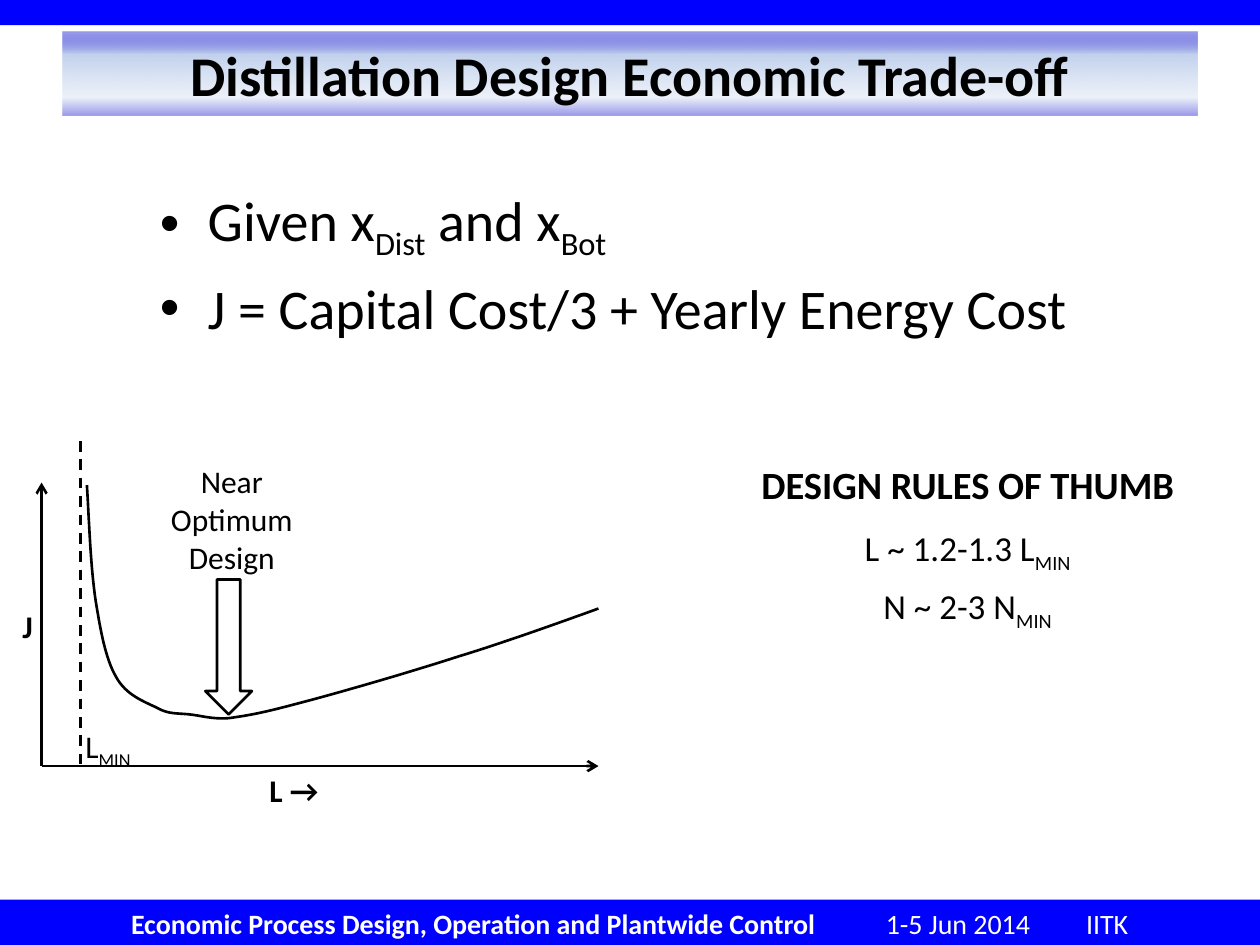
"""Build the distillation design economic trade-off slide."""
from lxml import etree
from pptx import Presentation
from pptx.dml.color import RGBColor
from pptx.enum.dml import MSO_LINE
from pptx.enum.shapes import MSO_CONNECTOR, MSO_SHAPE
from pptx.enum.text import MSO_ANCHOR, PP_ALIGN
from pptx.oxml import parse_xml
from pptx.oxml.ns import nsdecls, qn
from pptx.util import Inches, Pt

BLUE = RGBColor(0x00, 0x00, 0xFF)
WHITE = RGBColor(0xFF, 0xFF, 0xFF)
BLACK = RGBColor(0x00, 0x00, 0x00)
VIOLET = RGBColor(0x00, 0x00, 0xCC)
SKY = RGBColor(0xC2, 0xD1, 0xED)
PALE = RGBColor(0xD2, 0xDD, 0xF1)
FONT = "Calibri"
LINE_WIDTH = Pt(1.5)

TITLE_STOPS = [(1, VIOLET, 39), (27, SKY, 100), (78, PALE, 40), (100, VIOLET, 40)]
CURVE_START = (0.69, 3.85)
CURVE_SEGMENTS = [
    ((0.71, 4.18), (0.72, 4.51), (0.76, 4.77)),
    ((0.80, 5.02), (0.84, 5.23), (0.92, 5.37)),
    ((1.00, 5.52), (1.15, 5.57), (1.25, 5.62)),
    ((1.34, 5.67), (1.41, 5.66), (1.50, 5.67)),
    ((1.60, 5.68), (1.68, 5.71), (1.82, 5.70)),
    ((1.95, 5.68), (2.04, 5.67), (2.34, 5.59)),
    ((2.65, 5.51), (3.24, 5.34), (3.64, 5.21)),
    ((4.04, 5.09), (4.75, 4.83), (4.75, 4.83)),
]


def add_box(s, kind, left, top, width, height, fill=None, outline=None):
    """Add a preset shape with an optional fill and outline."""
    sp = s.shapes.add_shape(kind, Inches(left), Inches(top), Inches(width), Inches(height))
    sp.shadow.inherit = False
    if fill is None:
        sp.fill.background()
    else:
        sp.fill.solid()
        sp.fill.fore_color.rgb = fill
    if outline is None:
        sp.line.fill.background()
    else:
        sp.line.color.rgb = outline
        sp.line.width = LINE_WIDTH
    return sp


def set_gradient(sp, stops):
    """Give a shape a vertical gradient of (position, colour, opacity) stops."""
    gs = "".join(
        f'<a:gs pos="{pos * 1000}"><a:srgbClr val="{color}">'
        f'<a:alpha val="{alpha * 1000}"/></a:srgbClr></a:gs>'
        for pos, color, alpha in stops
    )
    grad = parse_xml(
        f'<a:gradFill {nsdecls("a")} rotWithShape="1"><a:gsLst>{gs}</a:gsLst>'
        '<a:lin ang="5400000" scaled="0"/></a:gradFill>'
    )
    spPr = sp._element.spPr
    spPr.replace(spPr.find(qn("a:noFill")), grad)


def write(p, text, size, bold=False, color=BLACK, align=PP_ALIGN.LEFT):
    """Fill a paragraph, setting the parts between underscores as subscripts."""
    p.alignment = align
    for i, part in enumerate(text.split("_")):
        if not part:
            continue
        r = p.add_run()
        r.text = part
        r.font.name = FONT
        r.font.size = Pt(size)
        r.font.bold = bold
        r.font.color.rgb = color
        if i % 2:
            r.font._element.set("baseline", "-25000")


def add_text(s, left, top, width, height, wrap=False):
    """Add an empty text box and return its text frame."""
    tb = s.shapes.add_textbox(Inches(left), Inches(top), Inches(width), Inches(height))
    tb.text_frame.word_wrap = wrap
    return tb.text_frame


def add_label(s, text, left, top, width, height, bold=False, wrap=False, align=PP_ALIGN.LEFT):
    """Add a diagram label."""
    tf = add_text(s, left, top, width, height, wrap)
    write(tf.paragraphs[0], text, 18, bold, align=align)


def add_line(s, start, end, arrow=False, dashed=False):
    """Add a straight black line, optionally dashed or with an arrowhead."""
    ends = [Inches(v) for v in (*start, *end)]
    line = s.shapes.add_connector(MSO_CONNECTOR.STRAIGHT, *ends)
    line.line.color.rgb = BLACK
    line.line.width = LINE_WIDTH
    if dashed:
        line.line.dash_style = MSO_LINE.DASH
    if arrow:
        etree.SubElement(line.line._get_or_add_ln(), qn("a:tailEnd"), type="arrow")
    etree.SubElement(line._element.spPr, qn("a:effectLst"))


def curve_points(start, segments, steps=16):
    """Return points along a chain of cubic Bezier segments."""
    points = [start]
    for c1, c2, end in segments:
        for i in range(1, steps + 1):
            t = i / steps
            u = 1 - t
            points.append(tuple(
                u**3 * a + 3 * u * u * t * b + 3 * u * t * t * c + t**3 * d
                for a, b, c, d in zip(start, c1, c2, end)
            ))
        start = end
    return points


def add_curve(s):
    """Draw the cost curve."""
    first, *rest = [(Inches(x), Inches(y)) for x, y in curve_points(CURVE_START, CURVE_SEGMENTS)]
    fb = s.shapes.build_freeform(*first)
    fb.add_line_segments(rest, close=False)
    sp = fb.convert_to_shape()
    sp.shadow.inherit = False
    sp.fill.background()
    sp.line.color.rgb = BLACK
    sp.line.width = LINE_WIDTH


def add_bands(s):
    """Add the top band and the footer with its tabbed text."""
    add_box(s, MSO_SHAPE.RECTANGLE, 0, 0, 10, 0.2, BLUE)
    tf = add_box(s, MSO_SHAPE.RECTANGLE, 0, 7.14, 10, 0.37, BLUE).text_frame
    tf.margin_left = Inches(1.04)
    tf.vertical_anchor = MSO_ANCHOR.MIDDLE
    p = tf.paragraphs[0]
    write(p, "Economic Process Design, Operation and Plantwide Control", 16, True, WHITE)
    write(p, "\t1-5 Jun 2014\tIITK", 16, False, WHITE)
    tabs = etree.SubElement(p._p.get_or_add_pPr(), qn("a:tabLst"))
    for pos in (5.99, 7.58):
        etree.SubElement(tabs, qn("a:tab"), pos=str(Inches(pos)), algn="l")


def add_title(s, text):
    """Add the title on its gradient panel."""
    sp = add_box(s, MSO_SHAPE.RECTANGLE, 0.5, 0.25, 9, 0.67)
    set_gradient(sp, TITLE_STOPS)
    sp.text_frame.vertical_anchor = MSO_ANCHOR.MIDDLE
    write(sp.text_frame.paragraphs[0], text, 32, True, align=PP_ALIGN.CENTER)


def add_bullets(s, items):
    """Add the bulleted statements."""
    tf = add_text(s, 1.17, 1.42, 7.75, 1.42, wrap=True)
    for i, item in enumerate(items):
        p = tf.add_paragraph() if i else tf.paragraphs[0]
        write(p, item, 32)
        p.space_before = Pt(7)
        pPr = p._p.get_or_add_pPr()
        pPr.set("marL", str(Inches(0.38)))
        pPr.set("indent", str(Inches(-0.38)))
        etree.SubElement(pPr, qn("a:buFont"), typeface="Arial")
        etree.SubElement(pPr, qn("a:buChar"), char="•")


def add_rules(s, heading, rules):
    """Add the rules of thumb under their heading."""
    tf = add_text(s, 5.92, 3.61, 3.52, 1.38)
    write(tf.paragraphs[0], heading, 22, True, align=PP_ALIGN.CENTER)
    tf.paragraphs[0].space_after = Pt(11)
    for rule in rules:
        p = tf.add_paragraph()
        write(p, rule, 20, align=PP_ALIGN.CENTER)
        p.space_after = Pt(6)


def add_diagram(s):
    """Draw the cost diagram with its axes, curve and labels."""
    origin = (0.33, 6.08)
    add_line(s, origin, (0.33, 3.83), arrow=True)
    add_line(s, origin, (4.75, 6.08), arrow=True)
    add_curve(s)
    add_line(s, (0.64, 3.5), (0.64, 6.08), dashed=True)
    add_label(s, "L_MIN_", 0.58, 5.72, 0.6, 0.4)
    add_label(s, "L →", 2.04, 6.07, 0.59, 0.4, bold=True)
    add_label(s, "J", 0.08, 4.77, 0.29, 0.4, bold=True)
    add_box(s, MSO_SHAPE.DOWN_ARROW, 1.63, 4.6, 0.37, 1.07, outline=BLACK)
    add_label(s, "Near Optimum Design", 1.05, 3.62, 1.58, 1.01, wrap=True, align=PP_ALIGN.CENTER)


def main():
    """Build and save the slide."""
    prs = Presentation()
    prs.slide_width, prs.slide_height = Inches(10), Inches(7.5)
    s = prs.slides.add_slide(prs.slide_layouts[6])
    add_bands(s)
    add_title(s, "Distillation Design Economic Trade-off")
    add_bullets(s, ["Given x_Dist_ and x_Bot_", "J = Capital Cost/3 + Yearly Energy Cost"])
    add_diagram(s)
    add_rules(s, "DESIGN RULES OF THUMB", ["L ~ 1.2-1.3 L_MIN_", "N ~ 2-3 N_MIN_"])
    prs.save("out.pptx")


if __name__ == "__main__":
    main()
